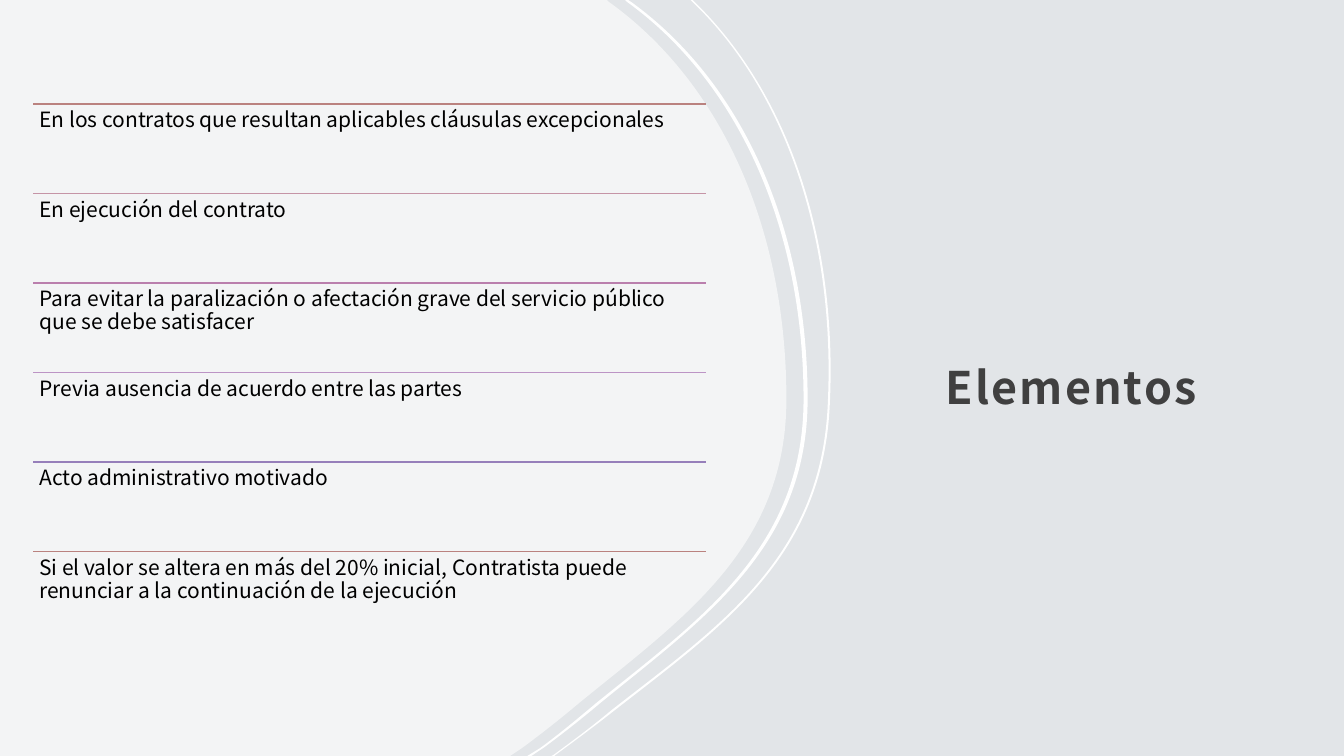
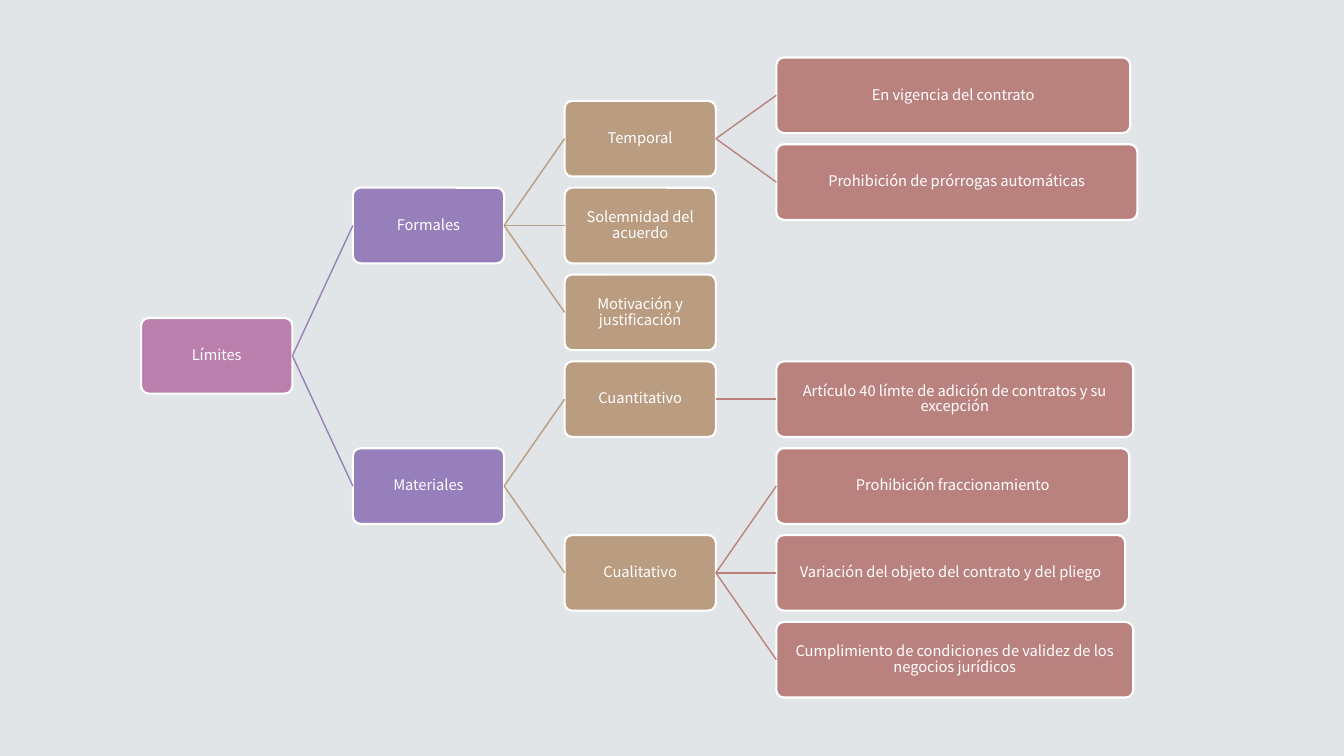
from lxml import etree
from pptx import Presentation
from pptx import util as u
from pptx.dml.color import RGBColor
from pptx.enum import shapes, text
from pptx.oxml.ns import qn

FONT = "Noto Sans CJK JP"
COLORS = {
    "background": "E2E5E8", "white": "FFFFFF", "black": "000000", "title": "404040",
    "red": "BA827F", "rose": "C594A6", "pink": "BA7FAD", "lilac": "BC94C5",
    "purple": "967FBA", "tan": "BA9C80",
}
TITLE_FORMAT = {"size": u.Pt(32), "bold": True, "name": FONT}
ITEM_FORMAT = {"size": u.Pt(15), "name": FONT}
NODE_FORMAT = {"size": u.Pt(10.5), "name": FONT}

# Outlines: a pair is a straight step, six numbers are a Bézier step
PANEL = [
    (0, 0), (6.02, 0), (6.04, 0.02), (7.17, 0.83, 7.8, 2.29, 7.8, 3.96),
    (7.8, 5.43, 6.78, 6.13, 5.75, 6.97), (5.56, 7.13, 5.37, 7.28, 5.18, 7.42),
    (5.06, 7.5), (0, 7.5),
]
OUTER_ARC = [
    (6.85, 0), (6.87, 0), (6.9, 0.03), (7.83, 0.94, 8.31, 2.4, 8.23, 4.02),
    (8.16, 5.55, 7.14, 6.23, 6.08, 7.06), (5.89, 7.21, 5.7, 7.35, 5.51, 7.49),
    (5.5, 7.5), (5.47, 7.5), (5.49, 7.49), (5.68, 7.35, 5.87, 7.21, 6.06, 7.05),
    (7.12, 6.22, 8.14, 5.55, 8.21, 4.02), (8.29, 2.4, 7.81, 0.93, 6.88, 0.03),
]
INNER_ARC = [
    (6.2, 0), (6.23, 0), (6.26, 0.02), (7.38, 0.83, 8.01, 2.29, 8.01, 3.96),
    (8.01, 5.43, 6.99, 6.13, 5.96, 6.97), (5.77, 7.13, 5.58, 7.28, 5.39, 7.42),
    (5.27, 7.5), (5.23, 7.5), (5.36, 7.42), (5.55, 7.28, 5.73, 7.13, 5.92, 6.97),
    (6.96, 6.13, 7.97, 5.43, 7.97, 3.96), (7.97, 2.29, 7.34, 0.83, 6.22, 0.02),
]

ITEMS = [
    ("En los contratos que resultan aplicables cláusulas excepcionales", "red"),
    ("En ejecución del contrato", "rose"),
    ("Para evitar la paralización o afectación grave del servicio público "
     "que se debe satisfacer", "pink"),
    ("Previa ausencia de acuerdo entre las partes", "lilac"),
    ("Acto administrativo motivado", "purple"),
    ("Si el valor se altera en más del 20% inicial, Contratista puede "
     "renunciar a la continuación de la ejecución", "red"),
]
ITEM_LEFT, ITEM_WIDTH = 0.33, 6.67
FIRST_ITEM_TOP, LAST_ITEM_TOP = 1.03, 5.47
ITEM_PITCH = (LAST_ITEM_TOP - FIRST_ITEM_TOP) / (len(ITEMS) - 1)

# Tree: (label, children) for a branch, (label, row, width) for a leaf
NODE_WIDTH, NODE_HEIGHT = 1.5, 0.75
TREE_LEFT, TREE_TOP, LAST_ROW_TOP, LAST_ROW = 1.4, 0.57, 6.17, 6.5
LEVEL_PITCH = NODE_WIDTH * 1.4
ROW_PITCH = (LAST_ROW_TOP - TREE_TOP) / LAST_ROW
LEVEL_COLORS = ["pink", "purple", "tan", "red"]
TREE = ("Límites", [
    ("Formales", [
        ("Temporal", [
            ("En vigencia del contrato", 0, 3.51),
            ("Prohibición de prórrogas automáticas", 1, 3.58),
        ]),
        ("Solemnidad del acuerdo", 1.5, NODE_WIDTH),
        ("Motivación y justificación", 2.5, NODE_WIDTH),
    ]),
    ("Materiales", [
        ("Cuantitativo", [
            ("Artículo 40 límte de adición de contratos y su excepción", 3.5, 3.54),
        ]),
        ("Cualitativo", [
            ("Prohibición fraccionamiento", 4.5, 3.5),
            ("Variación del objeto del contrato y del pliego", 5.5, 3.46),
            ("Cumplimiento de condiciones de validez de los negocios jurídicos",
             LAST_ROW, 3.54),
        ]),
    ]),
])


def rgb(name):
    return RGBColor.from_string(COLORS[name])


def set_attributes(target, values):
    for name, value in values.items():
        setattr(target, name, value)


def write_text(shape, content, font, color, margin, line_spacing,
               align=text.PP_ALIGN.LEFT, anchor=text.MSO_ANCHOR.TOP):
    """Fill a shape with one formatted paragraph and return its run."""
    frame = shape.text_frame
    sides = ("left", "top", "right", "bottom")
    set_attributes(frame, {f"margin_{side}": u.Inches(margin) for side in sides})
    set_attributes(frame, {"word_wrap": True, "vertical_anchor": anchor,
                           "auto_size": text.MSO_AUTO_SIZE.NONE})
    paragraph = frame.paragraphs[0]
    set_attributes(paragraph, {"alignment": align, "line_spacing": line_spacing})
    run = paragraph.add_run()
    run.text = content
    set_attributes(run.font, font)
    run.font.color.rgb = rgb(color)
    return run


def add_line(slide, start, end, color):
    ends = [u.Inches(value) for value in (*start, *end)]
    line = slide.shapes.add_connector(shapes.MSO_CONNECTOR.STRAIGHT, *ends)
    line.line.color.rgb = rgb(color)
    line.line.width = u.Pt(1)
    etree.SubElement(line._element.spPr, qn("a:effectLst"))
    return line


def bend(shape, outline):
    """Turn the straight segments of the Bézier steps into curves."""
    segments = list(shape._element.spPr.iter(qn("a:lnTo")))
    for segment, step in zip(segments, outline[1:]):
        if len(step) == 6:
            curve = etree.Element(qn("a:cubicBezTo"))
            for x, y in zip(step[::2], step[1::2]):
                etree.SubElement(curve, qn("a:pt"), x=str(u.Inches(x) - shape.left),
                                 y=str(u.Inches(y) - shape.top))
            segment.getparent().replace(segment, curve)


def add_outline(slide, outline, opacity=100):
    corners = [(u.Inches(step[-2]), u.Inches(step[-1])) for step in outline]
    builder = slide.shapes.build_freeform(*corners[0])
    builder.add_line_segments(corners[1:], close=True)
    shape = builder.convert_to_shape()
    bend(shape, outline)
    shape.shadow.inherit = False
    shape.fill.solid()
    shape.fill.fore_color.rgb = rgb("white")
    shape.line.fill.background()
    if opacity < 100:
        color = shape._element.spPr.find(qn("a:solidFill")).find(qn("a:srgbClr"))
        etree.SubElement(color, qn("a:alpha"), val=str(opacity * 1000))


def add_title(slide, content):
    title = slide.shapes.title
    set_attributes(title, {"left": u.Inches(9.26), "top": u.Inches(1.44),
                           "width": u.Inches(3.51), "height": u.Inches(4.62)})
    run = write_text(title, content, TITLE_FORMAT, "title", 0.12, 1.3,
                     anchor=text.MSO_ANCHOR.MIDDLE)
    title.text_frame.margin_bottom = u.Inches(0.1)
    run.font._element.set("spc", "150")  # letter spacing, 1.5 pt


def add_item(slide, index, content, color):
    top = FIRST_ITEM_TOP + index * ITEM_PITCH
    add_line(slide, (ITEM_LEFT, top), (ITEM_LEFT + ITEM_WIDTH, top), color)
    box = slide.shapes.add_textbox(u.Inches(ITEM_LEFT), u.Inches(top),
                                   u.Inches(ITEM_WIDTH), u.Inches(ITEM_PITCH))
    write_text(box, content, ITEM_FORMAT, "black", 0.06, 0.9)


def add_node(slide, label, level, row, width):
    node = slide.shapes.add_shape(
        shapes.MSO_SHAPE.ROUNDED_RECTANGLE,
        u.Inches(TREE_LEFT + level * LEVEL_PITCH), u.Inches(TREE_TOP + row * ROW_PITCH),
        u.Inches(width), u.Inches(NODE_HEIGHT))
    node.adjustments[0] = 0.1
    node.shadow.inherit = False
    node.fill.solid()
    node.fill.fore_color.rgb = rgb(LEVEL_COLORS[level])
    node.line.color.rgb = rgb("white")
    node.line.width = u.Pt(1.5)
    write_text(node, label, NODE_FORMAT, "white", 0.03, 0.9,
               text.PP_ALIGN.CENTER, text.MSO_ANCHOR.MIDDLE)
    return node


def add_tree(slide, branch, level=0):
    """Draw a branch, centred on its children; return its node and row."""
    if len(branch) == 3:
        label, row, width = branch
        return add_node(slide, label, level, row, width), row
    label, children = branch
    drawn = [add_tree(slide, child, level + 1) for child in children]
    row = (drawn[0][1] + drawn[-1][1]) / 2
    node = add_node(slide, label, level, row, NODE_WIDTH)
    for child, _ in drawn:
        link = add_line(slide, (0, 0), (0, 0), LEVEL_COLORS[level + 1])
        link.begin_connect(node, 3)
        link.end_connect(child, 1)
    return node, row


def main():
    presentation = Presentation()
    presentation.slide_width = u.Inches(13.33)
    presentation.slide_height = u.Inches(7.5)
    background = presentation.slide_master.background.fill
    background.solid()
    background.fore_color.rgb = rgb("background")
    title_only, blank = presentation.slide_layouts[5], presentation.slide_layouts[6]

    # Elements list beside the curved panel
    slide = presentation.slides.add_slide(title_only)
    add_title(slide, "Elementos")
    add_outline(slide, PANEL, opacity=60)
    add_outline(slide, OUTER_ARC)
    add_outline(slide, INNER_ARC)
    for index, (content, color) in enumerate(ITEMS):
        add_item(slide, index, content, color)

    # Tree of limits
    slide = presentation.slides.add_slide(blank)
    add_tree(slide, TREE)

    presentation.save("out.pptx")


if __name__ == "__main__":
    main()
